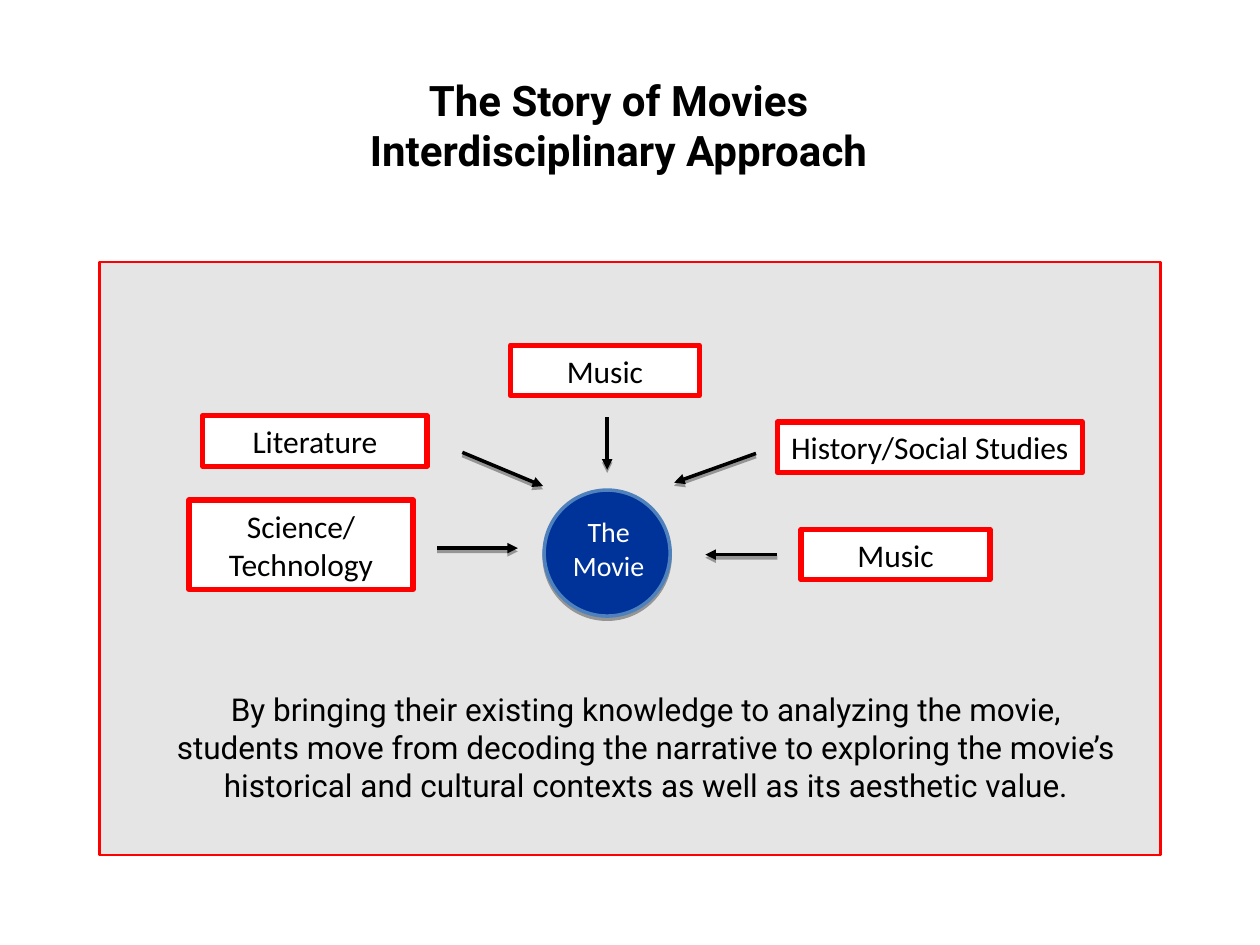
from lxml import etree
from pptx import Presentation
from pptx import util as u
from pptx.dml import color
from pptx.enum import shapes, text
from pptx.oxml import ns

SHADOW = {"blurRad": "0", "dist": "22860", "dir": "5400000", "rotWithShape": "0"}


def rgb(value):
    return color.RGBColor.from_string(value)


def add_child(parent, tag, **attributes):
    return etree.SubElement(parent, ns.qn(tag), attributes)


class SlideBuilder:
    black, white, red = "000000", "FFFFFF", "FF0000"
    gray, navy, blue = "D9D9D9", "003399", "4F81BD"
    title_font, label_font = "Roboto", "Calibri"

    def __init__(self, slide):
        self.slide = slide

    def set_text(self, shape, content, size, font, ink=black, bold=False,
                 anchor=text.MSO_ANCHOR.MIDDLE, wrap=True):
        frame = shape.text_frame
        frame.text = content
        frame.word_wrap = wrap
        frame.vertical_anchor = anchor
        for paragraph in frame.paragraphs:
            paragraph.alignment = text.PP_ALIGN.CENTER
            for run in paragraph.runs:
                run.font.size = u.Pt(size)
                run.font.name = font
                run.font.bold = bold
                run.font.color.rgb = rgb(ink)

    def effect(self, shape, shadow):
        effects = add_child(shape._element.spPr, "a:effectLst")
        if shadow:
            outer = add_child(effects, "a:outerShdw", **SHADOW)
            tint = add_child(outer, "a:srgbClr", val=self.black)
            add_child(tint, "a:alpha", val="35000")

    def shape(self, kind, box, fill, line, width, shadow=False):
        shape = self.slide.shapes.add_shape(kind, *map(u.Cm, box))
        shape.fill.solid()
        shape.fill.fore_color.rgb = rgb(fill)
        shape.line.color.rgb = rgb(line)
        shape.line.width = u.Pt(width)
        self.effect(shape, shadow)
        return shape

    def title(self, content, box):
        title = self.slide.shapes.title
        title.left, title.top, title.width, title.height = map(u.Cm, box)
        self.set_text(title, content, 24, self.title_font, bold=True,
                      anchor=text.MSO_ANCHOR.TOP)

    def panel(self, content, box):
        panel = self.shape(shapes.MSO_SHAPE.RECTANGLE, box, self.gray, self.red, 1.5)
        tint = panel._element.spPr.find(ns.qn("a:solidFill"))[0]
        add_child(tint, "a:alpha", val="67000")
        self.set_text(panel, content, 18, self.title_font, anchor=text.MSO_ANCHOR.BOTTOM)
        panel.text_frame.margin_left = u.Cm(0.89)
        panel.text_frame.margin_bottom = u.Cm(1.04)

    def subject(self, content, box):
        subject = self.shape(shapes.MSO_SHAPE.RECTANGLE, box, self.white, self.red, 3)
        self.set_text(subject, content, 18, self.label_font, wrap=False)

    def hub(self, content, circle, label):
        self.shape(shapes.MSO_SHAPE.OVAL, circle, self.navy, self.blue, 2, shadow=True)
        textbox = self.slide.shapes.add_textbox(*map(u.Cm, label))
        self.set_text(textbox, content, 16, self.label_font, self.white)

    def arrow(self, *ends):
        arrow = self.slide.shapes.add_connector(
            shapes.MSO_CONNECTOR.STRAIGHT, *map(u.Cm, ends))
        arrow.line.color.rgb = rgb(self.black)
        arrow.line.width = u.Pt(2)
        line = arrow._element.spPr.find(ns.qn("a:ln"))
        add_child(line, "a:tailEnd", type="triangle")
        self.effect(arrow, shadow=True)


def main():
    presentation = Presentation()
    presentation.slide_width, presentation.slide_height = u.Cm(25.4), u.Cm(19.05)
    slide = presentation.slides.add_slide(presentation.slide_layouts[5])
    builder = SlideBuilder(slide)

    builder.title("The Story of Movies Interdisciplinary Approach",
                  (6.12, 1.37, 12.7, 3.07))
    builder.panel(
        "By bringing their existing knowledge to analyzing the movie,\n"
        "students move from decoding the narrative to exploring the movie’s "
        "historical and cultural contexts as well as its aesthetic value.",
        (2.01, 5.28, 21.39, 11.96))
    builder.hub("The\nMovie", (10.97, 9.88, 2.54, 2.54), (10.85, 10.24, 2.84, 1.63))

    subjects = [
        ("Literature", (4.09, 8.38, 4.52, 1.02)),
        ("History/Social Studies", (15.67, 8.51, 6.15, 1.02)),
        ("Music", (16.15, 10.67, 3.81, 1.02)),
        ("Music", (10.29, 6.96, 3.81, 1.02)),
        ("Science/\nTechnology", (3.81, 10.08, 4.52, 1.8)),
    ]
    for content, box in subjects:
        builder.subject(content, box)

    arrows = [
        (8.81, 11.05, 10.44, 11.05),
        (9.32, 9.12, 10.95, 9.8),
        (15.24, 9.14, 13.59, 9.73),
        (12.24, 8.41, 12.24, 9.47),
        (15.67, 11.18, 14.22, 11.18),
    ]
    for ends in arrows:
        builder.arrow(*ends)

    presentation.save("out.pptx")


if __name__ == "__main__":
    main()
